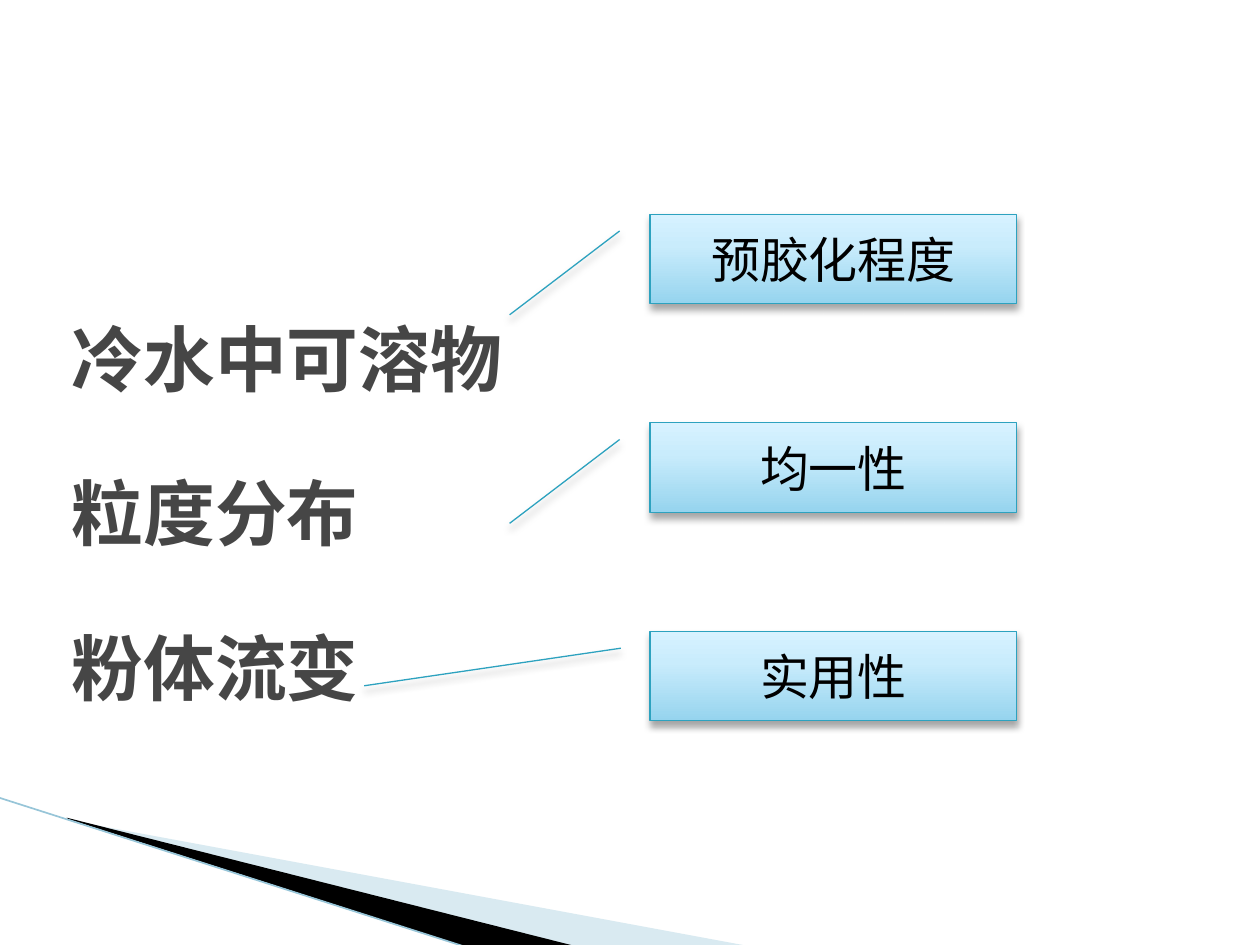
from lxml import etree
from pptx import Presentation
from pptx.dml.color import RGBColor
from pptx.enum.shapes import MSO_CONNECTOR, MSO_SHAPE
from pptx.enum.text import MSO_ANCHOR, PP_ALIGN
from pptx.oxml import parse_xml
from pptx.oxml.ns import nsdecls, qn
from pptx.util import Inches, Pt

FONT = "Noto Sans Mono"
STOPS = [(0, "96D4EE"), (65, "C9ECFC"), (100, "D7F2FF")]


def rgb(value):
    return RGBColor.from_string(value)


def write(s, lines, size, color, bold=False, align=PP_ALIGN.LEFT, gap=0):
    tf = s.text_frame
    tf.word_wrap = True
    tf.vertical_anchor = MSO_ANCHOR.MIDDLE
    for i, line in enumerate(lines):
        p = tf.add_paragraph() if i else tf.paragraphs[0]
        p.alignment = align
        if i:
            p.space_before = Pt(gap)
        r = p.add_run()
        r.text = line
        r.font.name, r.font.size, r.font.bold = FONT, Pt(size), bold
        r.font.color.rgb = rgb(color)
        ea = etree.SubElement(r._r.get_or_add_rPr(), qn("a:ea"))
        ea.set("typeface", FONT)


def add_wedge(slide, points, color, alpha=100):
    pts = [(Inches(x), Inches(y)) for x, y in points]
    fb = slide.shapes.build_freeform(*pts[0])
    fb.add_line_segments(pts[1:], close=True)
    s = fb.convert_to_shape()
    s.shadow.inherit = False
    s.fill.solid()
    s.fill.fore_color.rgb = rgb(color)
    s.line.fill.background()
    if alpha < 100:
        clr = s._element.spPr.find(".//" + qn("a:srgbClr"))
        etree.SubElement(clr, qn("a:alpha")).set("val", str(alpha * 1000))


def add_corner(slide):
    add_wedge(slide, [(0.55, 6.51), (5.95, 7.51), (4.56, 7.51), (0.55, 6.5)],
              "A0CBDC", 40)
    add_wedge(slide, [(0.53, 6.49), (4.57, 7.51), (3.72, 7.52), (0.54, 6.5)],
              "000000")
    s = slide.shapes.add_connector(MSO_CONNECTOR.STRAIGHT, Inches(-0.01),
                                   Inches(6.33), Inches(3.71), Inches(7.52))
    s.line.color.rgb = rgb("97C5D8")
    s.line.width = Pt(0.95)
    etree.SubElement(s._element.spPr, qn("a:effectLst"))


def add_topics(slide, x, y, w, h, lines):
    s = slide.shapes.add_textbox(Inches(x), Inches(y), Inches(w), Inches(h))
    write(s, lines, 41, "464646", bold=True, gap=39)


def add_callout(slide, x, y, w, h, text, adjustments=()):
    s = slide.shapes.add_shape(MSO_SHAPE.LINE_CALLOUT_1, Inches(x), Inches(y),
                               Inches(w), Inches(h))
    for i, value in enumerate(adjustments):
        s.adjustments[i] = value
    s.line.color.rgb = rgb("2DA2BF")
    s.line.width = Pt(0.75)
    stops = "".join(f'<a:gs pos="{pos * 1000}"><a:srgbClr val="{c}"/></a:gs>'
                    for pos, c in STOPS)
    spPr = s._element.spPr
    spPr.find(qn("a:prstGeom")).addnext(parse_xml(
        f'<a:gradFill {nsdecls("a")} rotWithShape="1"><a:gsLst>{stops}</a:gsLst>'
        '<a:lin ang="16200000" scaled="0"/></a:gradFill>'))
    spPr.find(qn("a:ln")).addnext(parse_xml(
        f'<a:effectLst {nsdecls("a")}><a:outerShdw blurRad="{Pt(4)}" '
        f'dist="{Pt(3)}" dir="5400000" rotWithShape="0"><a:srgbClr val="000000">'
        '<a:alpha val="35000"/></a:srgbClr></a:outerShdw></a:effectLst>'))
    write(s, [text], 28, "000000", align=PP_ALIGN.CENTER)


def add_callouts(slide, x, y, w, h, pitch, items):
    for i, (text, adjustments) in enumerate(items):
        add_callout(slide, x, y + i * pitch, w, h, text, adjustments)


def main():
    prs = Presentation()
    prs.slide_width, prs.slide_height = Inches(10), Inches(7.5)
    slide = prs.slides.add_slide(prs.slide_layouts[6])
    add_corner(slide)
    add_topics(slide, 0.47, 1.87, 9, 4.39, ["冷水中可溶物", "粒度分布", "粉体流变"])
    add_callouts(slide, 5.16, 1.7, 2.91, 0.71, 1.655, [
        ("预胶化程度", ()),
        ("均一性", ()),
        ("实用性", (0.19, -0.08, 0.61, -0.78)),
    ])
    prs.save("out.pptx")


if __name__ == "__main__":
    main()
